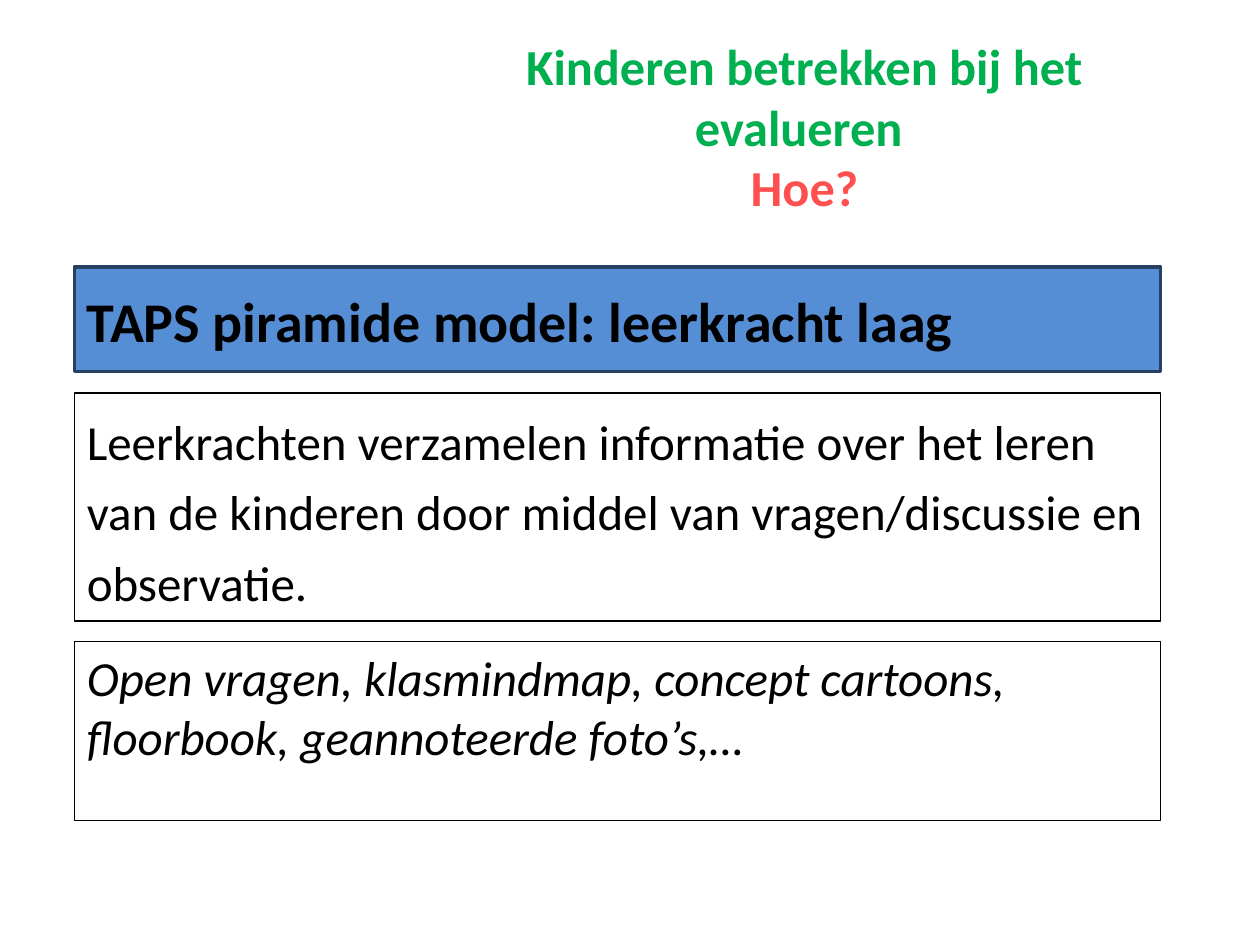
from dataclasses import dataclass
from typing import Optional

from pptx import Presentation
from pptx.dml.color import RGBColor
from pptx.enum.shapes import MSO_SHAPE
from pptx.enum.text import MSO_ANCHOR, PP_ALIGN
from pptx.util import Inches, Pt


@dataclass(frozen=True)
class Theme:
    font: str = "Calibri"
    green: str = "00B050"
    red: str = "FF5050"
    black: str = "000000"
    blue: str = "558ED5"
    navy: str = "254061"
    title_size: float = 28.8
    banner_size: float = 32
    body_size: float = 28


THEME = Theme()
LEFT, WIDTH = 0.59, 8.62


@dataclass(frozen=True)
class Panel:
    text: str
    top: float
    height: float
    size: float = THEME.body_size
    line: str = THEME.black
    line_width: float = 0.75
    fill: Optional[str] = None
    spacing: float = 1.0
    bold: bool = False
    italic: bool = False


PANELS = [
    Panel("TAPS piramide model: leerkracht laag", 2.12, 0.83,
          size=THEME.banner_size, line=THEME.navy, line_width=2,
          fill=THEME.blue, spacing=1.2, bold=True),
    Panel("Leerkrachten verzamelen informatie over het leren van de kinderen "
          "door middel van vragen/discussie en observatie.", 3.12, 1.81,
          spacing=1.2),
    Panel("Open vragen, klasmindmap, concept cartoons, floorbook, "
          "geannoteerde foto’s,…", 5.09, 1.42, italic=True),
]


def style_run(r, size: float, color: str, bold: bool = False,
              italic: bool = False) -> None:
    r.font.name = THEME.font
    r.font.size = Pt(size)
    r.font.color.rgb = RGBColor.from_string(color)
    r.font.bold = bold
    r.font.italic = italic


def add_title(s) -> None:
    sp = s.shapes.add_textbox(Inches(3.27), Inches(0.3), Inches(6.23), Inches(1.4))
    tf = sp.text_frame
    tf.word_wrap = True
    tf.vertical_anchor = MSO_ANCHOR.MIDDLE
    p = tf.paragraphs[0]
    p.text = "Kinderen betrekken bij het evalueren \vHoe?"
    p.alignment = PP_ALIGN.CENTER
    for r, color in zip(p.runs, (THEME.green, THEME.red)):
        style_run(r, THEME.title_size, color, bold=True)


def add_panel(s, panel: Panel) -> None:
    sp = s.shapes.add_shape(MSO_SHAPE.RECTANGLE, Inches(LEFT), Inches(panel.top),
                            Inches(WIDTH), Inches(panel.height))
    sp.shadow.inherit = False
    if panel.fill:
        sp.fill.solid()
        sp.fill.fore_color.rgb = RGBColor.from_string(panel.fill)
    else:
        sp.fill.background()
    sp.line.color.rgb = RGBColor.from_string(panel.line)
    sp.line.width = Pt(panel.line_width)

    tf = sp.text_frame
    tf.word_wrap = True
    tf.vertical_anchor = MSO_ANCHOR.TOP
    p = tf.paragraphs[0]
    p.text = panel.text
    p.alignment = PP_ALIGN.LEFT
    p.line_spacing = panel.spacing
    style_run(p.runs[0], panel.size, THEME.black, panel.bold, panel.italic)


def main() -> None:
    prs = Presentation()
    prs.slide_width, prs.slide_height = Inches(10), Inches(7.5)
    s = prs.slides.add_slide(prs.slide_layouts[6])

    # Heading
    add_title(s)

    # Banner, explanation and examples
    for panel in PANELS:
        add_panel(s, panel)

    prs.save("out.pptx")


if __name__ == "__main__":
    main()
